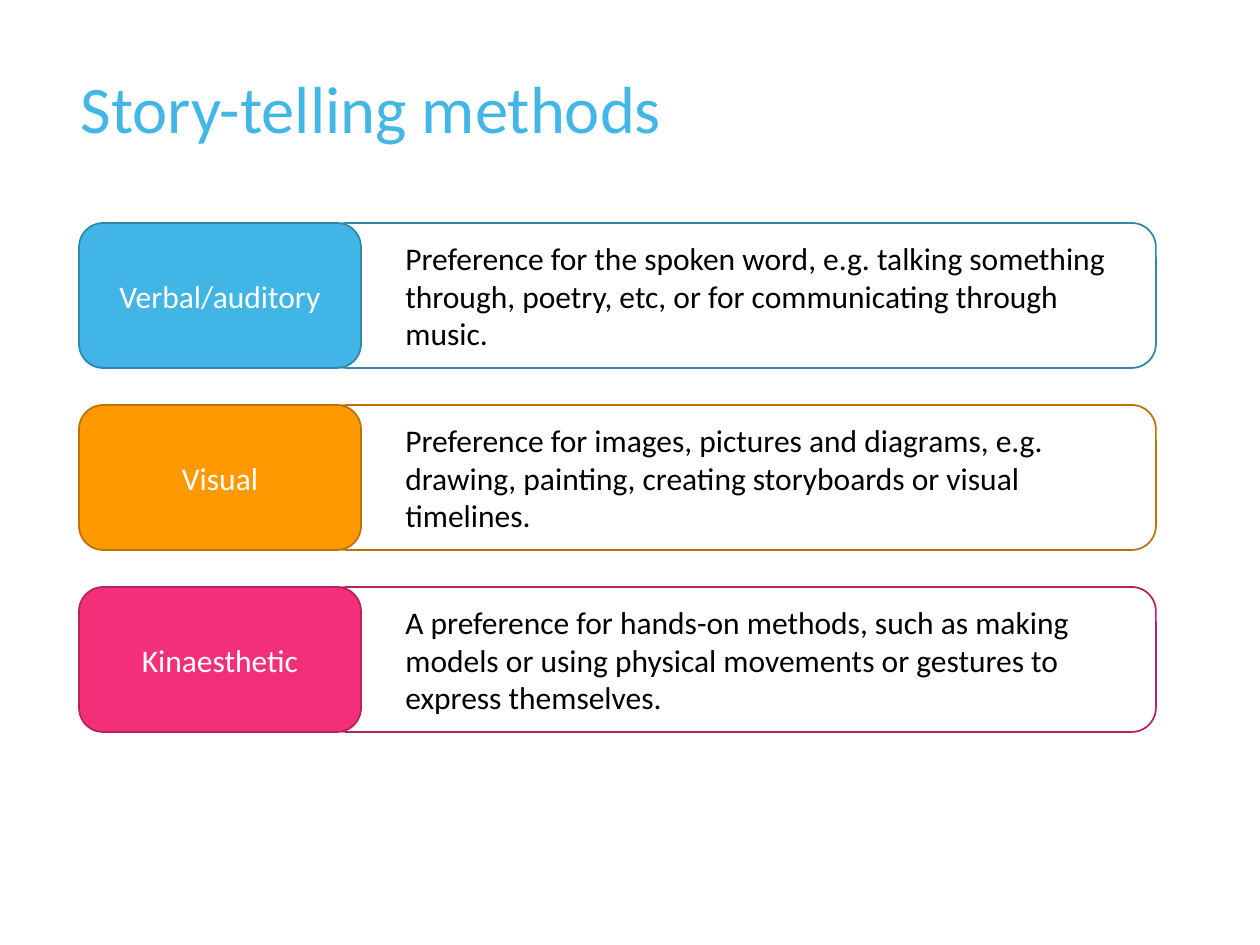
import pptx
import pptx.util
import pptx.dml.color
import pptx.enum.shapes
import pptx.enum.text

RGBColor = pptx.dml.color.RGBColor
ALIGN = pptx.enum.text.PP_ALIGN
ANCHOR = pptx.enum.text.MSO_ANCHOR

EMU_PER_PX = 914400 / 126
FONT = "Calibri"
WHITE = RGBColor(0xFF, 0xFF, 0xFF)
BLACK = RGBColor(0x00, 0x00, 0x00)
TITLE_BLUE = RGBColor(0x42, 0xB6, 0xE6)
BLUE = RGBColor(0x41, 0xB6, 0xE6)
DARK_BLUE = RGBColor(0x30, 0x87, 0xAA)
ORANGE = RGBColor(0xFF, 0x99, 0x00)
DARK_ORANGE = RGBColor(0xBD, 0x71, 0x00)
PINK = RGBColor(0xF3, 0x2F, 0x79)
DARK_PINK = RGBColor(0xB4, 0x23, 0x5A)

FIRST_TOP, ROW_PITCH, ROW_HEIGHT = 223, 182, 145
LABEL_LEFT, LABEL_WIDTH = 79, 282
DESCRIPTION_LEFT, DESCRIPTION_WIDTH = 323, 833
DESCRIPTION_INDENT = 63

METHODS = [
    ("Verbal/auditory", BLUE, DARK_BLUE,
     "Preference for the spoken word, e.g. talking something through, poetry, etc, "
     "or for communicating through music."),
    ("Visual", ORANGE, DARK_ORANGE,
     "Preference for images, pictures and diagrams, e.g. drawing, painting, "
     "creating storyboards or visual timelines."),
    ("Kinaesthetic", PINK, DARK_PINK,
     "A preference for hands-on methods, such as making models or using physical "
     "movements or gestures to express themselves."),
]


def px(length):
    return pptx.util.Emu(round(length * EMU_PER_PX))


def write(frame, text, size, color, align, anchor):
    frame.text = text
    frame.word_wrap = True
    frame.vertical_anchor = anchor
    paragraph = frame.paragraphs[0]
    paragraph.alignment = align
    font = paragraph.runs[0].font
    font.name, font.size = FONT, pptx.util.Pt(size)
    font.color.rgb = color
    return paragraph


def add_title(slide, text):
    title = slide.shapes.title
    title.left, title.top, title.width, title.height = px(68), px(70), px(1142), px(130)
    paragraph = write(title.text_frame, text, 38, TITLE_BLUE, ALIGN.LEFT, ANCHOR.TOP)
    paragraph.line_spacing = 0.9


def add_card(slide, left, top, width, fill, outline, text, color, align):
    card = slide.shapes.add_shape(
        pptx.enum.shapes.MSO_SHAPE.ROUNDED_RECTANGLE,
        px(left), px(top), px(width), px(ROW_HEIGHT))
    card.shadow.inherit = False
    card.fill.solid()
    card.fill.fore_color.rgb = fill
    card.line.color.rgb = outline
    card.line.width = pptx.util.Pt(1)
    return write(card.text_frame, text, 18, color, align, ANCHOR.MIDDLE)


def add_method(slide, top, label, fill, outline, description):
    paragraph = add_card(slide, DESCRIPTION_LEFT, top, DESCRIPTION_WIDTH, WHITE, outline,
                         description, BLACK, ALIGN.LEFT)
    paragraph.level = 1
    properties = paragraph._p.get_or_add_pPr()
    properties.set("marL", str(px(DESCRIPTION_INDENT)))
    properties.set("indent", "0")
    add_card(slide, LABEL_LEFT, top, LABEL_WIDTH, fill, outline, label, WHITE, ALIGN.CENTER)


def main():
    deck = pptx.Presentation()
    deck.slide_width, deck.slide_height = px(1260), px(945)
    slide = deck.slides.add_slide(deck.slide_layouts[5])
    add_title(slide, "Story-telling methods")
    for row, method in enumerate(METHODS):
        add_method(slide, FIRST_TOP + row * ROW_PITCH, *method)
    deck.save("out.pptx")


if __name__ == "__main__":
    main()
